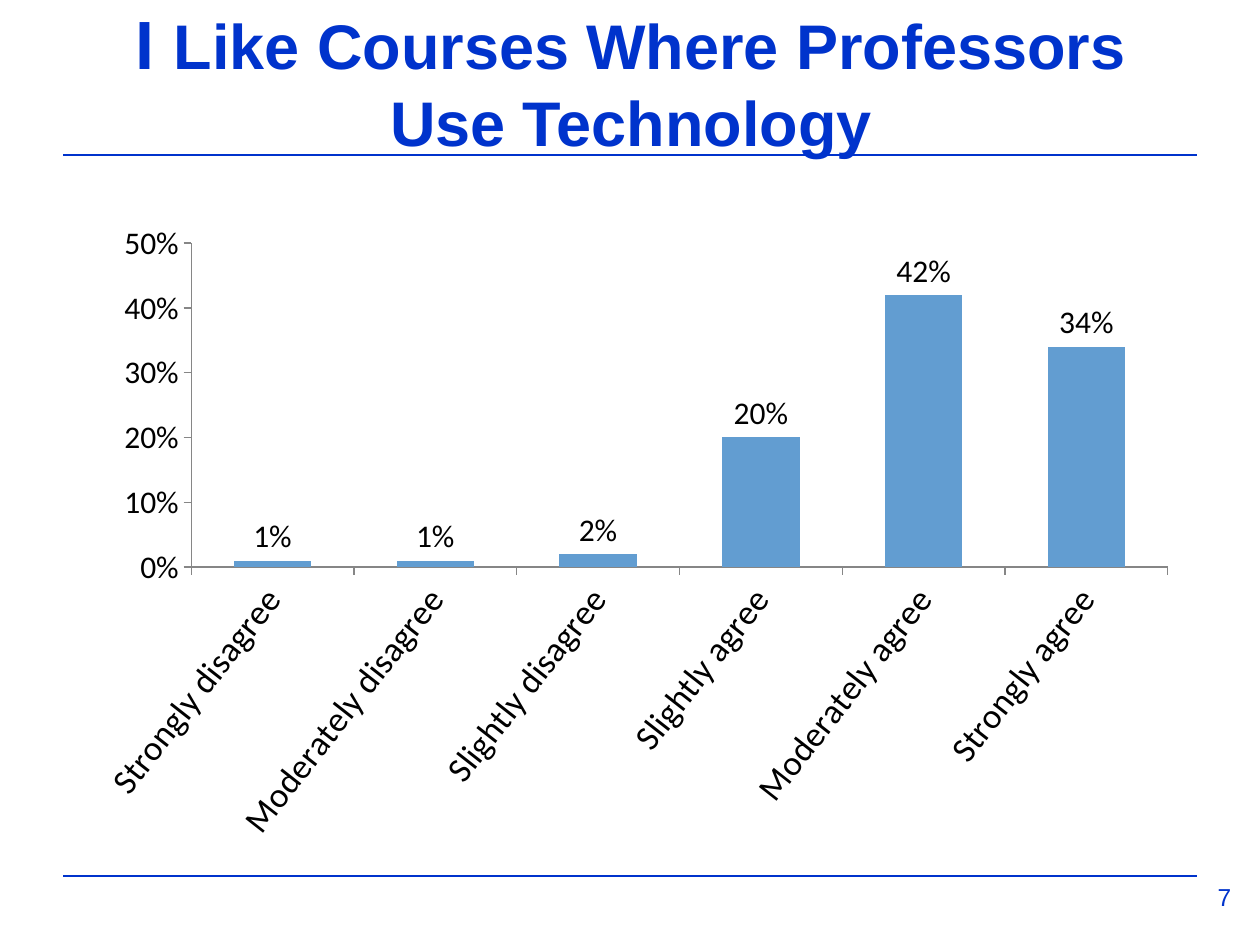
from dataclasses import dataclass

from lxml import etree
from pptx import Presentation
from pptx.chart.data import CategoryChartData
from pptx.dml.color import RGBColor
from pptx.enum.chart import XL_CHART_TYPE, XL_LABEL_POSITION, XL_TICK_MARK
from pptx.enum.shapes import MSO_CONNECTOR
from pptx.enum.text import MSO_ANCHOR, PP_ALIGN
from pptx.oxml import parse_xml
from pptx.oxml.ns import nsdecls, qn
from pptx.util import Emu, Pt

COLUMN = XL_CHART_TYPE.COLUMN_CLUSTERED
ABOVE = XL_LABEL_POSITION.OUTSIDE_END
OUT = XL_TICK_MARK.OUTSIDE
STRAIGHT = MSO_CONNECTOR.STRAIGHT
TOP, BOTTOM = MSO_ANCHOR.TOP, MSO_ANCHOR.BOTTOM
CENTER = PP_ALIGN.CENTER


@dataclass(frozen=True)
class Theme:
    blue: RGBColor = RGBColor(0x00, 0x33, 0xCC)
    bar: RGBColor = RGBColor(0x62, 0x9D, 0xD1)
    ink: RGBColor = RGBColor(0x00, 0x00, 0x00)
    axis: RGBColor = RGBColor(0x86, 0x86, 0x86)
    head: str = "Arial"
    body: str = "Calibri"
    lead: int = 39
    title: int = 36
    cats: int = 20
    vals: int = 18
    page: int = 14


THEME = Theme()
ANSWERS = {
    "Strongly disagree": 0.01,
    "Moderately disagree": 0.01,
    "Slightly disagree": 0.02,
    "Slightly agree": 0.20,
    "Moderately agree": 0.42,
    "Strongly agree": 0.34,
}


def px(n):
    return Emu(round(n * 914400 / 126))


def style(font, size, color, name, bold=False):
    font.size = Pt(size)
    font.color.rgb = color
    font.name = name
    font.bold = bold


def add_rule(slide, left, top, width):
    line = slide.shapes.add_connector(
        STRAIGHT, px(left), px(top), px(left + width), px(top))
    line.line.color.rgb = THEME.blue
    line.line.width = Pt(1.5)
    etree.SubElement(line._element.spPr, qn("a:effectLst"))


def add_text(slide, box, parts, anchor, bold=False):
    frame = slide.shapes.add_textbox(*map(px, box)).text_frame
    frame.word_wrap = True
    frame.vertical_anchor = anchor
    para = frame.paragraphs[0]
    para.alignment = CENTER
    for text, size in parts:
        run = para.add_run()
        run.text = text
        style(run.font, size, THEME.blue, THEME.head, bold)


def add_head(slide, left, top, width, height):
    parts = [("I ", THEME.lead),
             ("Like Courses Where Professors Use Technology", THEME.title)]
    add_text(slide, (left, top, width, height), parts, BOTTOM, True)
    add_rule(slide, left - 1, top + height - 10, width)


def add_foot(slide, left, top, width, height):
    add_rule(slide, left, top, width)
    box = (left + width - 8, top, 71, height)
    add_text(slide, box, [("7", THEME.page)], TOP)


def style_axis(axis, size):
    axis.has_major_gridlines = False
    axis.major_tick_mark = OUT
    axis.format.line.color.rgb = THEME.axis
    axis.format.line.width = Pt(0.75)
    style(axis.tick_labels.font, size, THEME.ink, THEME.body)


def set_layout(chart, x, y, w, h):
    area = chart._chartSpace.chart.plotArea
    for old in area.findall(qn("c:layout")):
        area.remove(old)
    area.insert(0, parse_xml(
        f'<c:layout {nsdecls("c")}><c:manualLayout>'
        '<c:layoutTarget val="inner"/>'
        '<c:xMode val="edge"/><c:yMode val="edge"/>'
        f'<c:x val="{x}"/><c:y val="{y}"/><c:w val="{w}"/><c:h val="{h}"/>'
        '</c:manualLayout></c:layout>'))


def add_bars(slide, *box):
    data = CategoryChartData(number_format="0%")
    data.categories = list(ANSWERS)
    data.add_series("Series 1", list(ANSWERS.values()))
    chart = slide.shapes.add_chart(COLUMN, *map(px, box), data).chart
    chart.has_legend = False
    chart.has_title = False
    style(chart.font, 10, THEME.ink, THEME.body)
    set_layout(chart, 0.148, 0.028, 0.82, 0.481)

    style_axis(chart.category_axis, THEME.cats)
    turn = chart.category_axis._element.find(qn("c:txPr")).find(qn("a:bodyPr"))
    turn.set("rot", "-3120000")
    turn.set("vert", "horz")
    scale = chart.value_axis
    style_axis(scale, THEME.vals)
    scale.minimum_scale, scale.maximum_scale = 0, 0.5
    scale.major_unit = 0.1
    scale.tick_labels.number_format = "0%"
    scale.tick_labels.number_format_is_linked = False

    plot = chart.plots[0]
    plot.gap_width = 110
    plot.vary_by_categories = False
    fill = plot.series[0].format.fill
    fill.solid()
    fill.fore_color.rgb = THEME.bar
    labels = plot.series[0].data_labels
    labels.show_value = True
    labels.position = ABOVE
    labels.number_format = "0%"
    labels.number_format_is_linked = False
    style(labels.font, THEME.vals, THEME.ink, THEME.body)


def main():
    deck = Presentation()
    deck.slide_width, deck.slide_height = px(1260), px(945)
    slide = deck.slides.add_slide(deck.slide_layouts[6])
    add_head(slide, 64, 15, 1134, 150)
    add_bars(slide, 15, 224, 1191, 674)
    add_foot(slide, 63, 876, 1134, 53)
    deck.save("out.pptx")


if __name__ == "__main__":
    main()
